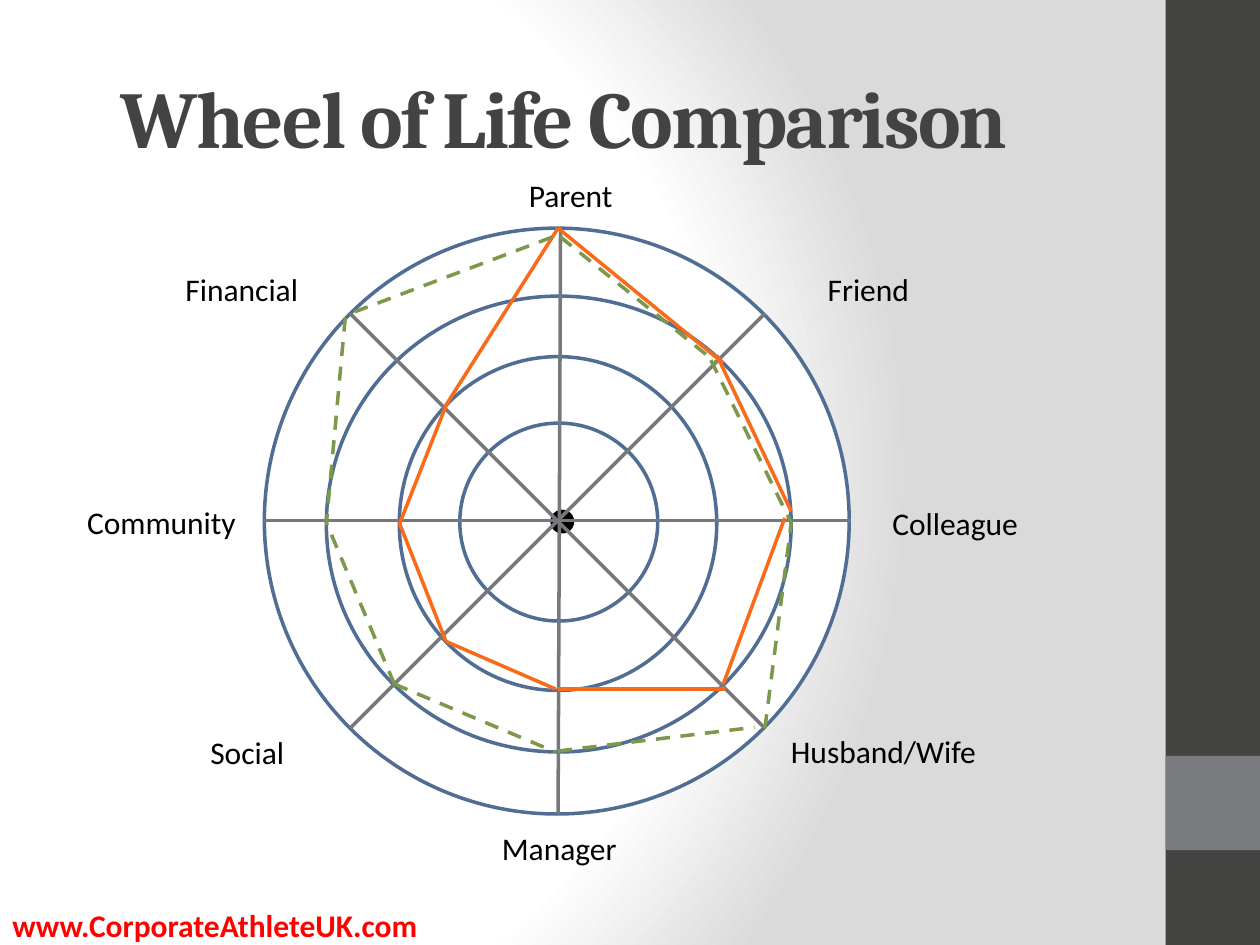
"""Build the Wheel of Life comparison slide."""
from dataclasses import dataclass

from lxml import etree
from pptx import Presentation
from pptx.dml.color import RGBColor
from pptx.enum.dml import MSO_LINE
from pptx.enum.shapes import MSO_CONNECTOR, MSO_SHAPE
from pptx.enum.text import MSO_ANCHOR, PP_ALIGN
from pptx.oxml import parse_xml
from pptx.oxml.ns import nsdecls, qn
from pptx.util import Cm, Pt


@dataclass(frozen=True)
class Theme:
    white: str = "FFFFFF"
    shade: str = "DADADA"
    charcoal: str = "434342"
    gray: str = "797B7E"
    spoke: str = "76787B"
    ring: str = "506E94"
    black: str = "000000"
    red: str = "FF0000"
    orange: str = "F96A1B"
    green: str = "7C984A"
    heading_font: str = "Cambria"
    body_font: str = "Calibri"
    title_size: int = 46
    body_size: int = 18
    line_width: int = 2


class WheelSlide:
    def __init__(self, slide, theme):
        self.slide = slide
        self.theme = theme

    def background(self):
        stops = ((0, self.theme.white), (75, self.theme.white), (100, self.theme.shade))
        stop_xml = "".join(
            f'<a:gs pos="{percent * 1000}"><a:srgbClr val="{color}"/></a:gs>'
            for percent, color in stops
        )
        gradient = parse_xml(
            f'<p:bg {nsdecls("p", "a")}><p:bgPr><a:gradFill rotWithShape="1">'
            f'<a:gsLst>{stop_xml}</a:gsLst><a:path path="circle">'
            '<a:fillToRect l="20000" t="50000" r="100000" b="50000"/></a:path>'
            '</a:gradFill><a:effectLst/></p:bgPr></p:bg>'
        )
        self.slide.element.find(qn("p:cSld")).insert(0, gradient)

    def shape(self, kind, box, fill, outline=None):
        figure = self.slide.shapes.add_shape(kind, *map(Cm, box))
        figure.shadow.inherit = False
        figure.fill.solid()
        figure.fill.fore_color.rgb = RGBColor.from_string(fill)
        if outline:
            figure.line.color.rgb = RGBColor.from_string(outline)
            figure.line.width = Pt(self.theme.line_width)
        else:
            figure.line.fill.background()

    def line(self, ends, color, dash=None):
        connector = self.slide.shapes.add_connector(MSO_CONNECTOR.STRAIGHT, *map(Cm, ends))
        connector.line.color.rgb = RGBColor.from_string(color)
        connector.line.width = Pt(self.theme.line_width)
        if dash:
            connector.line.dash_style = dash
        etree.SubElement(connector.element.spPr, qn("a:effectLst"))

    def text(self, words, box, color, size=None, font=None, bold=False,
             align=PP_ALIGN.CENTER, anchor=MSO_ANCHOR.TOP, spacing=0):
        frame = self.slide.shapes.add_textbox(*map(Cm, box)).text_frame
        frame.word_wrap = True
        frame.vertical_anchor = anchor
        paragraph = frame.paragraphs[0]
        paragraph.alignment = align
        run = paragraph.add_run()
        run.text = words
        if spacing:
            run.font._element.set("spc", str(spacing * 100))
        paragraph.font.name = font or self.theme.body_font
        paragraph.font.size = Pt(size or self.theme.body_size)
        paragraph.font.bold = bold
        paragraph.font.color.rgb = RGBColor.from_string(color)


RINGS = (
    (5.33, 4.6, 11.79, 11.81),
    (6.58, 5.97, 9.37, 9.19),
    (8.05, 7.19, 6.4, 6.73),
    (9.27, 8.53, 3.99, 3.99),
)
HUB = (11.13, 10.31, 0.41, 0.41)
SPOKES = (
    (5.33, 10.49, 17.15, 10.49),
    (11.3, 4.6, 11.25, 16.41),
    (7.06, 6.32, 15.42, 14.68),
    (15.42, 6.32, 7.06, 14.68),
)
ROLES = (
    ("Parent", 9.42, 3.43, 4.17),
    ("Friend", 15.42, 5.31, 4.17),
    ("Colleague", 17.17, 10.03, 4.17),
    ("Husband/Wife", 15.42, 14.63, 4.78),
    ("Manager", 9.19, 16.59, 4.17),
    ("Social", 2.9, 14.66, 4.17),
    ("Community", 1.17, 10.01, 4.17),
    ("Financial", 2.79, 5.31, 4.17),
)
SOLID_PROFILE = (
    (11.25, 4.6, 14.58, 7.32),
    (14.45, 7.16, 15.95, 10.31),
    (15.82, 10.44, 14.58, 13.79),
    (11.25, 13.89, 14.61, 13.89),
    (8.99, 12.93, 11.2, 13.89),
    (8.05, 10.54, 8.99, 12.93),
    (8.99, 8.18, 8.05, 10.57),
    (8.97, 8.2, 11.25, 4.6),
)
DASHED_PROFILE = (
    (11.3, 4.78, 14.45, 7.32),
    (14.33, 7.26, 15.95, 10.54),
    (15.42, 14.68, 15.95, 10.54),
    (11.25, 15.14, 15.21, 14.66),
    (7.95, 13.79, 11.2, 15.16),
    (7.95, 13.79, 6.58, 10.54),
    (6.96, 6.4, 6.58, 10.54),
    (11.13, 4.78, 7.06, 6.32),
)


def main():
    deck = Presentation()
    deck.slide_width, deck.slide_height = Cm(25.4), Cm(19.05)
    theme = Theme()
    wheel = WheelSlide(deck.slides.add_slide(deck.slide_layouts[6]), theme)

    wheel.background()
    wheel.shape(MSO_SHAPE.RECTANGLE, (23.5, 0, 1.9, 19.05), theme.charcoal)
    wheel.shape(MSO_SHAPE.RECTANGLE, (23.5, 15.24, 1.9, 1.9), theme.gray)
    wheel.text("www.CorporateAthleteUK.com", (0, 18.14, 11.3, 1.02), theme.red,
               bold=True, align=PP_ALIGN.LEFT)
    wheel.text("Wheel of Life Comparison", (0.79, 0.76, 21.16, 3.18), theme.charcoal,
               theme.title_size, theme.heading_font, bold=True,
               anchor=MSO_ANCHOR.MIDDLE, spacing=-1)

    for ring in RINGS:
        wheel.shape(MSO_SHAPE.OVAL, ring, theme.white, theme.ring)
    wheel.shape(MSO_SHAPE.OVAL, HUB, theme.black, theme.black)
    for spoke in SPOKES:
        wheel.line(spoke, theme.spoke)
    for role, left, top, width in ROLES:
        wheel.text(role, (left, top, width, 1.02), theme.black)
    for side in SOLID_PROFILE:
        wheel.line(side, theme.orange)
    for side in DASHED_PROFILE:
        wheel.line(side, theme.green, MSO_LINE.DASH)

    deck.save("out.pptx")


if __name__ == "__main__":
    main()
